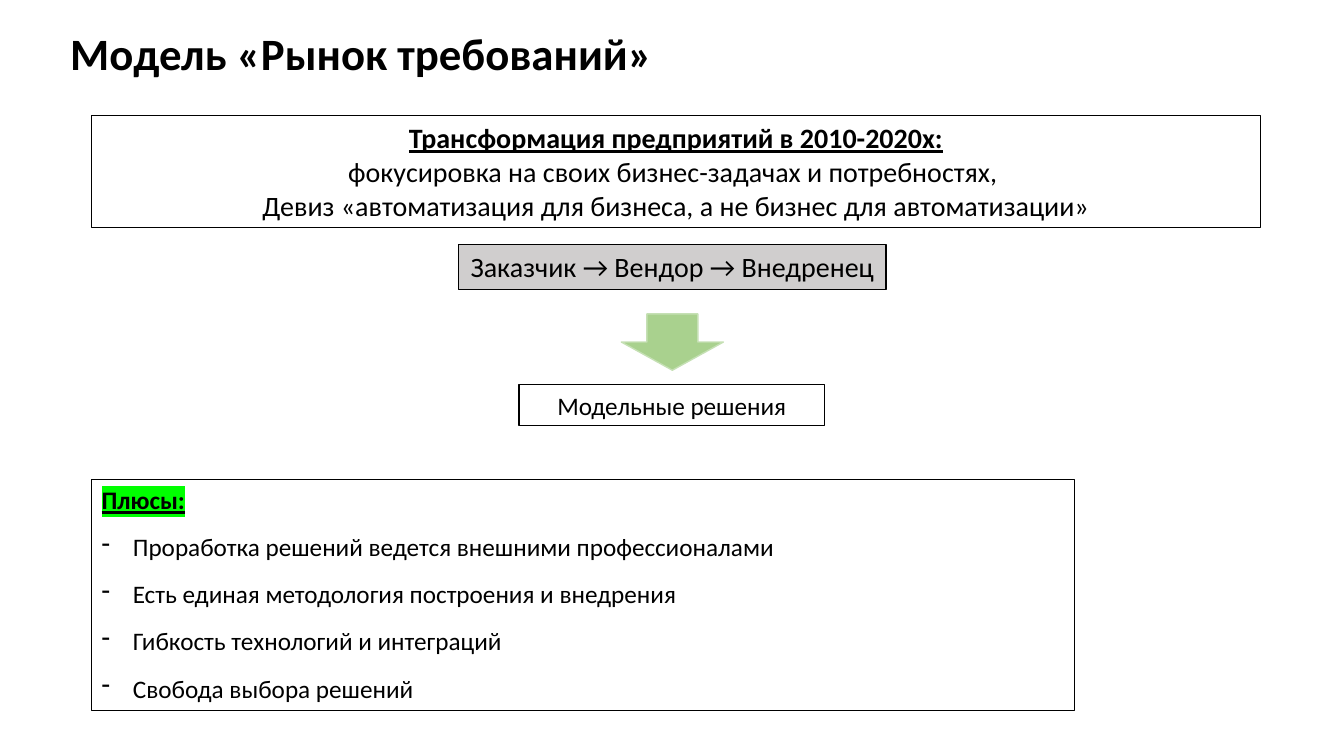
from lxml import etree
from pptx import Presentation
from pptx import util as u
from pptx.dml.color import RGBColor
from pptx.enum import shapes, text
from pptx.oxml.ns import qn

BLACK = RGBColor(0x00, 0x00, 0x00)
GREY = RGBColor(0xD0, 0xCE, 0xCE)
GREEN = RGBColor(0xA9, 0xD1, 0x8E)
PALE = RGBColor(0xC5, 0xE0, 0xB4)
LIME = RGBColor(0x00, 0xFF, 0x00)
INDENT = u.Cm(0.79)

deck = Presentation()
deck.slide_width, deck.slide_height = u.Cm(33.87), u.Cm(19.05)
slide = deck.slides.add_slide(deck.slide_layouts[6])


def add_form(kind, left, top, width, height, fill=None, line=BLACK, weight=0.75):
    form = slide.shapes.add_shape(kind, u.Cm(left), u.Cm(top), u.Cm(width), u.Cm(height))
    form.shadow.inherit = False
    if fill is None:
        form.fill.background()
    else:
        form.fill.solid()
        form.fill.fore_color.rgb = fill
    form.line.color.rgb = line
    form.line.width = u.Pt(weight)
    return form


def write(box, words, size=18, bold=False, under=False, mark=None,
          align=text.PP_ALIGN.CENTER, before=0, bullet=None):
    """Add one paragraph to a box; the first call fills its empty one."""
    frame = box.text_frame
    frame.word_wrap = True
    para = frame.add_paragraph() if frame.text else frame.paragraphs[0]
    para.alignment = align
    para.space_before = u.Pt(before)
    run = para.add_run()
    run.text = words
    font = run.font
    font.name, font.size, font.bold, font.underline = "Calibri", u.Pt(size), bold, under
    font.color.rgb = BLACK
    if mark is not None:
        light = etree.Element(qn("a:highlight"))
        etree.SubElement(light, qn("a:srgbClr"), val=str(mark))
        run._r.rPr.find(qn("a:latin")).addprevious(light)
    if bullet:
        props = para._p.get_or_add_pPr()
        props.set("marL", str(INDENT))
        props.set("indent", str(-INDENT))
        etree.SubElement(props, qn("a:buChar"), char=bullet)
    return para


RECT = shapes.MSO_SHAPE.RECTANGLE
LEFT = text.PP_ALIGN.LEFT

title = slide.shapes.add_textbox(u.Cm(1.52), u.Cm(0.48), u.Cm(29.21), u.Cm(1.85))
title.text_frame.vertical_anchor = text.MSO_ANCHOR.MIDDLE
write(title, "Модель «Рынок требований»", size=32, bold=True, align=LEFT).line_spacing = 0.9

trend = add_form(RECT, 2.31, 2.92, 29.46, 2.82)
write(trend, "Трансформация предприятий в 2010-2020х:", size=20, bold=True, under=True)
write(trend, "фокусировка на своих бизнес-задачах и потребностях, ", size=20)
write(trend, "Девиз «автоматизация для бизнеса, а не бизнес для автоматизации»", size=20)

chain = add_form(RECT, 11.56, 6.17, 10.77, 1.12, fill=GREY)
write(chain, "Заказчик → Вендор → Внедренец", size=20, before=12)

add_form(shapes.MSO_SHAPE.DOWN_ARROW, 15.66, 7.91, 2.57, 1.42, fill=GREEN, line=PALE, weight=1)

result = add_form(RECT, 13.08, 9.7, 7.7, 1.02)
write(result, "Модельные решения")

pros = add_form(RECT, 2.31, 12.09, 24.77, 5.82)
write(pros, "Плюсы:", bold=True, under=True, mark=LIME, align=LEFT, before=12)
for point in (
    "Проработка решений ведется внешними профессионалами",
    "Есть единая методология построения и внедрения",
    "Гибкость технологий и интеграций",
    "Свобода выбора решений",
):
    write(pros, point, align=LEFT, before=12, bullet="-")

for box in (trend, chain, result, pros):
    box.text_frame.vertical_anchor = text.MSO_ANCHOR.TOP
    box.text_frame.auto_size = text.MSO_AUTO_SIZE.SHAPE_TO_FIT_TEXT

deck.save("out.pptx")
